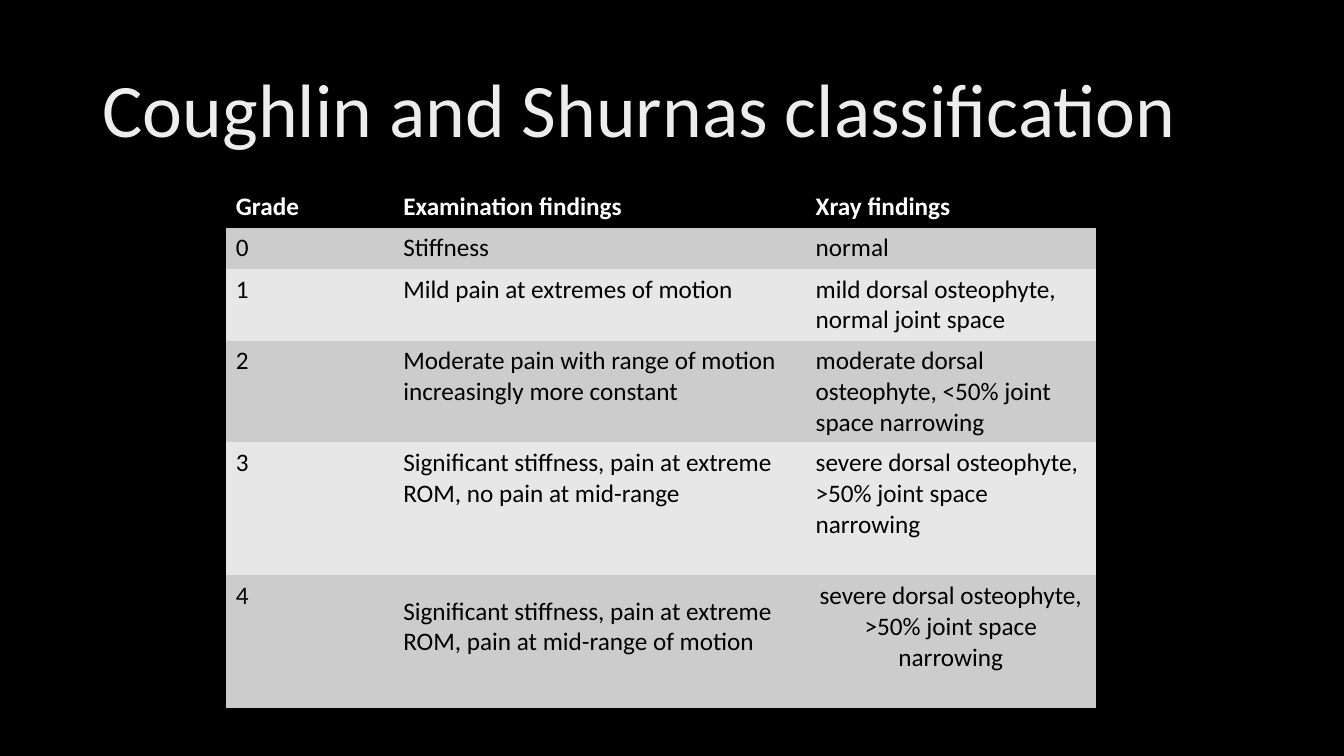
from pptx import Presentation
from pptx.dml.color import RGBColor
from pptx.enum.text import MSO_ANCHOR as Anchor, PP_ALIGN as Align
from pptx.util import Inches, Pt

BLACK = RGBColor(0x00, 0x00, 0x00)
WHITE = RGBColor(0xFF, 0xFF, 0xFF)
TITLE_GRAY = RGBColor(0xED, 0xED, 0xED)
BAND_DARK = RGBColor(0xCC, 0xCC, 0xCC)
BAND_LIGHT = RGBColor(0xE7, 0xE7, 0xE7)
FONT = "Calibri"
NO_STYLE = "{2D5ABB26-0587-4C30-8999-92F81FD0307C}"

COLUMN_WIDTHS = [1.66, 4.09, 2.88]
ROW_HEIGHTS = [0.41, 0.41, 0.71, 1.01, 1.32, 1.32]
GRADES = [
    ("Grade", "Examination findings", "Xray findings"),
    ("0", "Stiffness", "normal"),
    ("1", "Mild pain at extremes of motion",
     "mild dorsal osteophyte, normal joint space"),
    ("2", "Moderate pain with range of motion increasingly more constant",
     "moderate dorsal osteophyte, <50% joint space narrowing"),
    ("3", "Significant stiffness, pain at extreme ROM, no pain at mid-range",
     "severe dorsal osteophyte, >50% joint space narrowing"),
    ("4", "Significant stiffness, pain at extreme ROM, pain at mid-range of motion",
     "severe dorsal osteophyte, >50% joint space narrowing"),
]

presentation = Presentation()
presentation.slide_width = Inches(13.33)
presentation.slide_height = Inches(7.5)
slide = presentation.slides.add_slide(presentation.slide_layouts[6])
slide.background.fill.solid()
slide.background.fill.fore_color.rgb = BLACK

# Title
title = slide.shapes.add_textbox(Inches(0.92), Inches(0.4), Inches(11.5), Inches(1.45))
title.text_frame.word_wrap = True
title.text_frame.vertical_anchor = Anchor.MIDDLE
paragraph = title.text_frame.paragraphs[0]
paragraph.text = "Coughlin and Shurnas classification"
paragraph.line_spacing = 0.9
paragraph.font.name = FONT
paragraph.font.size = Pt(54)
paragraph.font.color.rgb = TITLE_GRAY

# Classification table
frame = slide.shapes.add_table(
    len(GRADES), len(COLUMN_WIDTHS), Inches(2.24), Inches(1.85),
    Inches(sum(COLUMN_WIDTHS)), Inches(sum(ROW_HEIGHTS)))
table = frame.table
table._tbl.tblPr.find("{*}tableStyleId").text = NO_STYLE
for column, width in zip(table.columns, COLUMN_WIDTHS):
    column.width = Inches(width)

for row_index, (height, texts) in enumerate(zip(ROW_HEIGHTS, GRADES)):
    table.rows[row_index].height = Inches(height)
    header = row_index == 0
    band = BLACK if header else BAND_DARK if row_index % 2 else BAND_LIGHT
    for column_index, text in enumerate(texts):
        cell = table.cell(row_index, column_index)
        cell.fill.solid()
        cell.fill.fore_color.rgb = band
        paragraph = cell.text_frame.paragraphs[0]
        paragraph.text = text
        paragraph.font.name = FONT
        paragraph.font.size = Pt(18)
        paragraph.font.bold = header
        paragraph.font.color.rgb = WHITE if header else BLACK

# Grade 4 findings sit slightly above the middle, and its X-ray text is centred
grade_4_examination = table.cell(5, 1)
grade_4_examination.vertical_anchor = Anchor.MIDDLE
grade_4_examination.margin_bottom = Inches(0.35)
table.cell(5, 2).text_frame.paragraphs[0].alignment = Align.CENTER

presentation.save("out.pptx")
